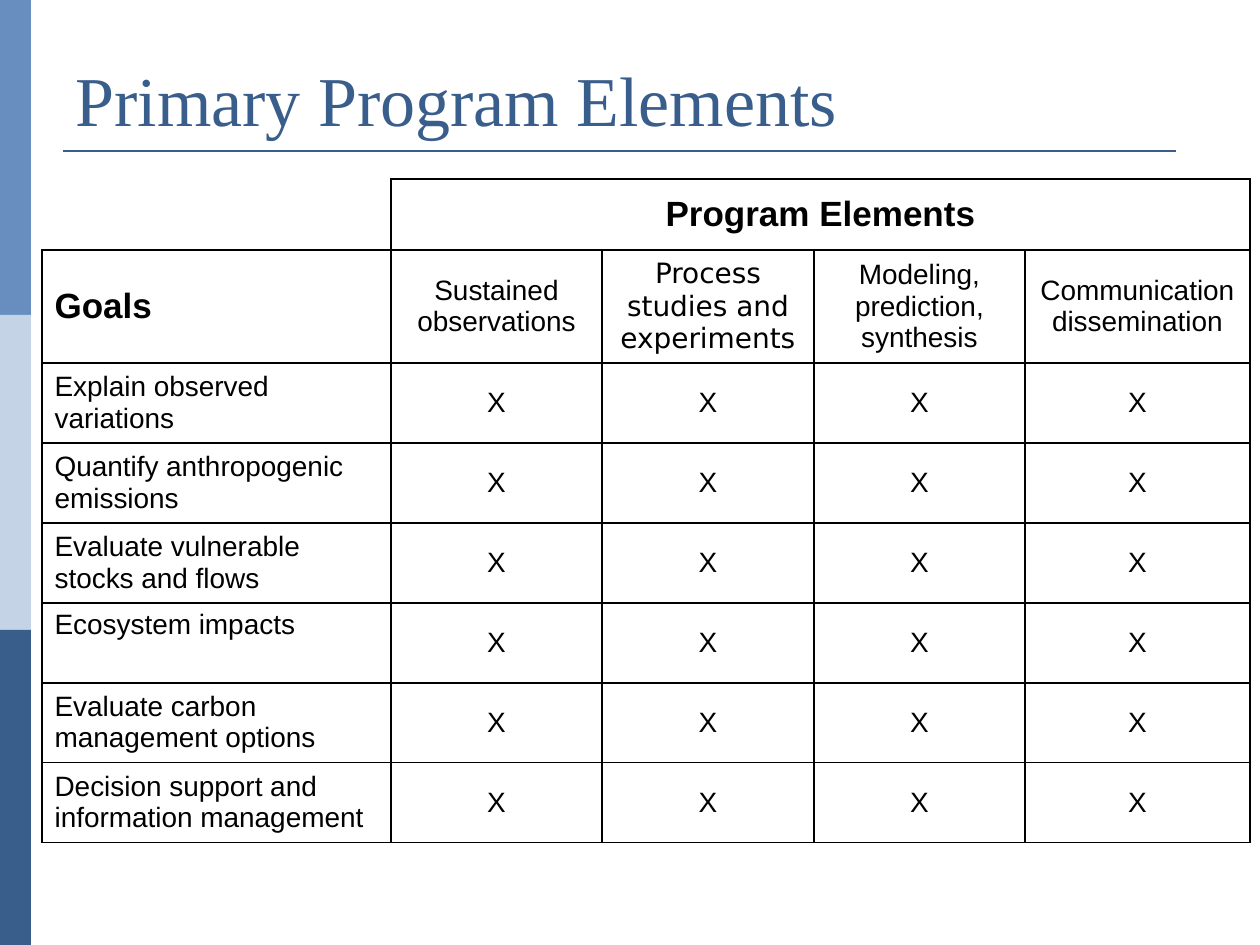
from lxml.etree import SubElement
from pptx import Presentation
from pptx.dml.color import RGBColor
from pptx.enum.shapes import MSO_CONNECTOR, MSO_SHAPE
from pptx.enum.text import MSO_ANCHOR as ANCHOR, PP_ALIGN as ALIGN
from pptx.oxml.ns import qn
from pptx.util import Pt

PX = 914400 // 126
NAVY = RGBColor(0x3A, 0x5E, 0x8C)
BLUE = RGBColor(0x68, 0x8E, 0xC0)
PALE = RGBColor(0xC4, 0xD3, 0xE6)
BLACK = RGBColor(0, 0, 0)


def add_borders(cell, sides):
    """Draw a black 1 pt border on the given sides and clear the others."""
    properties = cell._tc.get_or_add_tcPr()
    for side in "LRTB":
        line = SubElement(properties, qn(f"a:ln{side}"), w=str(Pt(1)))
        if side in sides:
            fill = SubElement(line, qn("a:solidFill"))
            SubElement(fill, qn("a:srgbClr"), val=str(BLACK))
        else:
            SubElement(line, qn("a:noFill"))


def write(paragraph, text, font_name, size, color, bold=False):
    run = paragraph.add_run()
    run.text = text
    run.font.name = font_name
    run.font.size = Pt(size)
    run.font.bold = bold
    run.font.color.rgb = color


prs = Presentation()
prs.slide_width, prs.slide_height = 1260 * PX, 945 * PX
slide = prs.slides.add_slide(prs.slide_layouts[5])

# Side bands and the rule under the title
for i, color in enumerate([BLUE, PALE, NAVY]):
    band = slide.shapes.add_shape(MSO_SHAPE.RECTANGLE, 0, i * 315 * PX, 31 * PX, 315 * PX)
    band.shadow.inherit = False
    band.fill.solid()
    band.fill.fore_color.rgb = color
    band.line.fill.background()

title_rule = slide.shapes.add_connector(
    MSO_CONNECTOR.STRAIGHT, 63 * PX, 151 * PX, 1176 * PX, 151 * PX)
title_rule.line.color.rgb = NAVY
title_rule.line.width = Pt(1.5)
SubElement(title_rule._element.spPr, qn("a:effectLst"))

title = slide.shapes.title
title.left, title.top, title.width, title.height = 63 * PX, 21 * PX, 1134 * PX, 126 * PX
title.text_frame.vertical_anchor = ANCHOR.BOTTOM
heading = title.text_frame.paragraphs[0]
heading.alignment = ALIGN.LEFT
write(heading, "Primary Program Elements", "Times New Roman", 40, NAVY)

# Goals against program elements
elements = ["Sustained observations", "Process studies and experiments",
            "Modeling, prediction, synthesis", "Communication dissemination"]
goals = ["Explain observed variations", "Quantify anthropogenic emissions",
         "Evaluate vulnerable stocks and flows", "Ecosystem impacts",
         "Evaluate carbon management options",
         "Decision support and information management"]
rows = [["", "Program Elements", "", "", ""], ["Goals", *elements]]
rows += [[goal] + ["X"] * len(elements) for goal in goals]
column_widths = [349, 211, 212, 211, 225]
row_heights = [71, 113] + [80] * len(goals)

matrix = slide.shapes.add_table(
    len(rows), len(column_widths), 42 * PX, 179 * PX,
    sum(column_widths) * PX, sum(row_heights) * PX).table
matrix.first_row = matrix.horz_banding = False
for column, width in zip(matrix.columns, column_widths):
    column.width = width * PX
for row, height in zip(matrix.rows, row_heights):
    row.height = height * PX
matrix.cell(0, 1).merge(matrix.cell(0, 4))

for r, texts in enumerate(rows):
    for c, text in enumerate(texts):
        cell = matrix.cell(r, c)
        add_borders(cell, "RB" if r == c == 0 else "LRTB")
        cell.fill.background()
        cell.vertical_anchor = ANCHOR.TOP if text == "Ecosystem impacts" else ANCHOR.MIDDLE
        if not text:
            continue
        paragraph = cell.text_frame.paragraphs[0]
        paragraph.alignment = ALIGN.CENTER if c else ALIGN.LEFT
        is_header = text in ("Program Elements", "Goals")
        font_name = "DejaVu Sans" if text == elements[1] else "Arial"
        write(paragraph, text, font_name, 20 if is_header else 16, BLACK, is_header)

prs.save("out.pptx")
